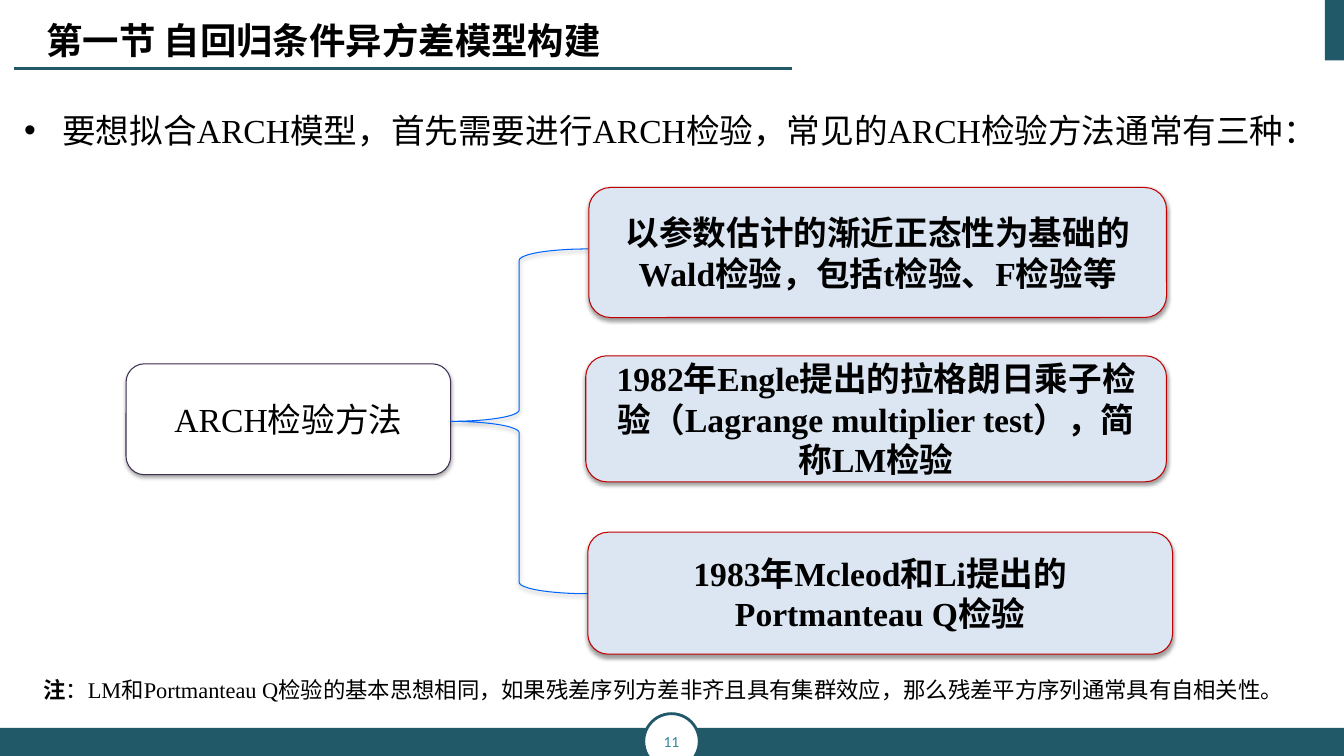
import pptx
import pptx.util
import pptx.dml.color
import pptx.enum.shapes
import pptx.enum.text
import pptx.oxml
import pptx.oxml.ns
from lxml import etree

Inches = pptx.util.Inches
Pt = pptx.util.Pt
SHAPE = pptx.enum.shapes.MSO_SHAPE
ALIGN = pptx.enum.text.PP_ALIGN
ANCHOR = pptx.enum.text.MSO_ANCHOR
qn = pptx.oxml.ns.qn

COLORS = {
    "teal": "215968", "number": "31859C", "white": "FFFFFF", "black": "000000",
    "purple": "403152", "blue": "0066FF", "red": "C00000", "pale": "DCE6F2",
}
SERIF = "Times New Roman"
CJK = "Noto Sans CJK SC"
SHADOW = (
    f'<a:effectLst xmlns:a="{pptx.oxml.ns.nsdecls("a").split(chr(34))[1]}">'
    '<a:outerShdw blurRad="40000" dist="20000" dir="5400000" rotWithShape="0">'
    '<a:srgbClr val="000000"><a:alpha val="38000"/></a:srgbClr>'
    '</a:outerShdw></a:effectLst>'
)
METHODS = [
    ((5.84, 1.86, 5.73, 1.29), "以参数估计的渐近正态性为基础的Wald检验，包括t检验、F检验等"),
    ((5.81, 3.53, 5.76, 1.25),
     "1982年Engle提出的拉格朗日乘子检验（Lagrange multiplier test），简称LM检验"),
    ((5.83, 5.28, 5.8, 1.21), "1983年Mcleod和Li提出的Portmanteau Q检验"),
]


def color(name):
    return pptx.dml.color.RGBColor.from_string(COLORS[name])


def format_run(run, size, font=SERIF, bold=False, ink="black"):
    run.font.size = Pt(size)
    run.font.name = font
    run.font.bold = bold
    run.font.color.rgb = color(ink)
    east_asian = etree.Element(qn("a:ea"), typeface=CJK)
    run.font._element.find(qn("a:latin")).addnext(east_asian)


def add_box(slide, kind, box, fill=None, line=None, width=0.75, shadow=False):
    shape = slide.shapes.add_shape(kind, *map(Inches, box))
    if shadow:
        shape._element.spPr.append(pptx.oxml.parse_xml(SHADOW))
    else:
        shape.shadow.inherit = False
    if fill:
        shape.fill.solid()
        shape.fill.fore_color.rgb = color(fill)
    else:
        shape.fill.background()
    if line:
        shape.line.color.rgb = color(line)
        shape.line.width = Pt(width)
    else:
        shape.line.fill.background()
    return shape


def set_label(shape, text, size, **style):
    """Centre one line of text in a shape."""
    frame = shape.text_frame
    frame.word_wrap = True
    frame.vertical_anchor = ANCHOR.MIDDLE
    frame.text = text
    frame.paragraphs[0].alignment = ALIGN.CENTER
    format_run(frame.paragraphs[0].runs[0], size, **style)


def add_text(slide, box):
    frame = slide.shapes.add_textbox(*map(Inches, box)).text_frame
    frame.word_wrap = True
    return frame.paragraphs[0]


def add_page_frame(slide, width, height, number):
    add_box(slide, SHAPE.RECTANGLE, (width - 0.19, 0, 0.19, 0.6), "teal")
    add_box(slide, SHAPE.RECTANGLE, (0, height - 0.28, width, 0.28), "teal")
    badge = add_box(slide, SHAPE.OVAL, (width / 2 - 0.28, height - 0.42, 0.55, 0.55),
                    "white", "teal", 2)
    frame = badge.text_frame
    frame.margin_left = frame.margin_right = 0
    set_label(badge, number, 11, font="Calibri", ink="number")


def add_title(slide, box, text):
    left, top, width, height = box
    rule = slide.shapes.add_connector(
        pptx.enum.shapes.MSO_CONNECTOR.STRAIGHT,
        Inches(left - 0.22), Inches(top + height + 0.01),
        Inches(left + width + 0.28), Inches(top + height + 0.01))
    rule.line.color.rgb = color("teal")
    rule.line.width = Pt(1.5)
    etree.SubElement(rule._element.spPr, qn("a:effectLst"))
    paragraph = add_text(slide, box)
    paragraph.text = text
    format_run(paragraph.runs[0], 26, font=CJK, bold=True)


def add_lead(slide, box, text):
    paragraph = add_text(slide, box)
    paragraph.text = text
    paragraph.line_spacing = 1.7
    properties = paragraph._element.get_or_add_pPr()
    properties.set("marL", str(Inches(0.38)))
    properties.set("indent", str(-Inches(0.38)))
    etree.SubElement(properties, qn("a:buFont"), typeface="Arial")
    etree.SubElement(properties, qn("a:buChar"), char="•")
    format_run(paragraph.runs[0], 24)


def add_method_tree(slide, root_box, root_text, methods):
    """Join a root box to its method boxes with a brace."""
    left, top, width, height = root_box
    root = add_box(slide, SHAPE.ROUNDED_RECTANGLE, root_box, "white", "purple", shadow=True)
    set_label(root, root_text, 24)
    brace_height = 3.42
    brace_box = (left + width, top + (height - brace_height) / 2 + 0.02, 1.36, brace_height)
    add_box(slide, SHAPE.LEFT_BRACE, brace_box, line="blue", shadow=True)
    for box, text in methods:
        method = add_box(slide, SHAPE.ROUNDED_RECTANGLE, box, "pale", "red", shadow=True)
        set_label(method, text, 24, bold=True)


def add_note(slide, box, head, body):
    paragraph = add_text(slide, box)
    for text, bold in ((head, True), (body, False)):
        run = paragraph.add_run()
        run.text = text
        format_run(run, 16, bold=bold)


def main():
    presentation = pptx.Presentation()
    width, height = 13.33, 7.5
    presentation.slide_width = Inches(width)
    presentation.slide_height = Inches(height)
    slide = presentation.slides.add_slide(presentation.slide_layouts[6])
    add_page_frame(slide, width, height, "11")
    add_lead(slide, (0.14, 0.76, 13.19, 6.32),
             "要想拟合ARCH模型，首先需要进行ARCH检验，常见的ARCH检验方法通常有三种：")
    add_title(slide, (0.36, 0.13, 7.22, 0.54), "第一节 自回归条件异方差模型构建")
    add_method_tree(slide, (1.25, 3.61, 3.22, 1.1), "ARCH检验方法", METHODS)
    add_note(slide, (0.33, 6.66, 12.65, 0.37), "注",
             "：LM和Portmanteau Q检验的基本思想相同，如果残差序列方差非齐且具有集群效应，"
             "那么残差平方序列通常具有自相关性。")
    presentation.save("out.pptx")


if __name__ == "__main__":
    main()
